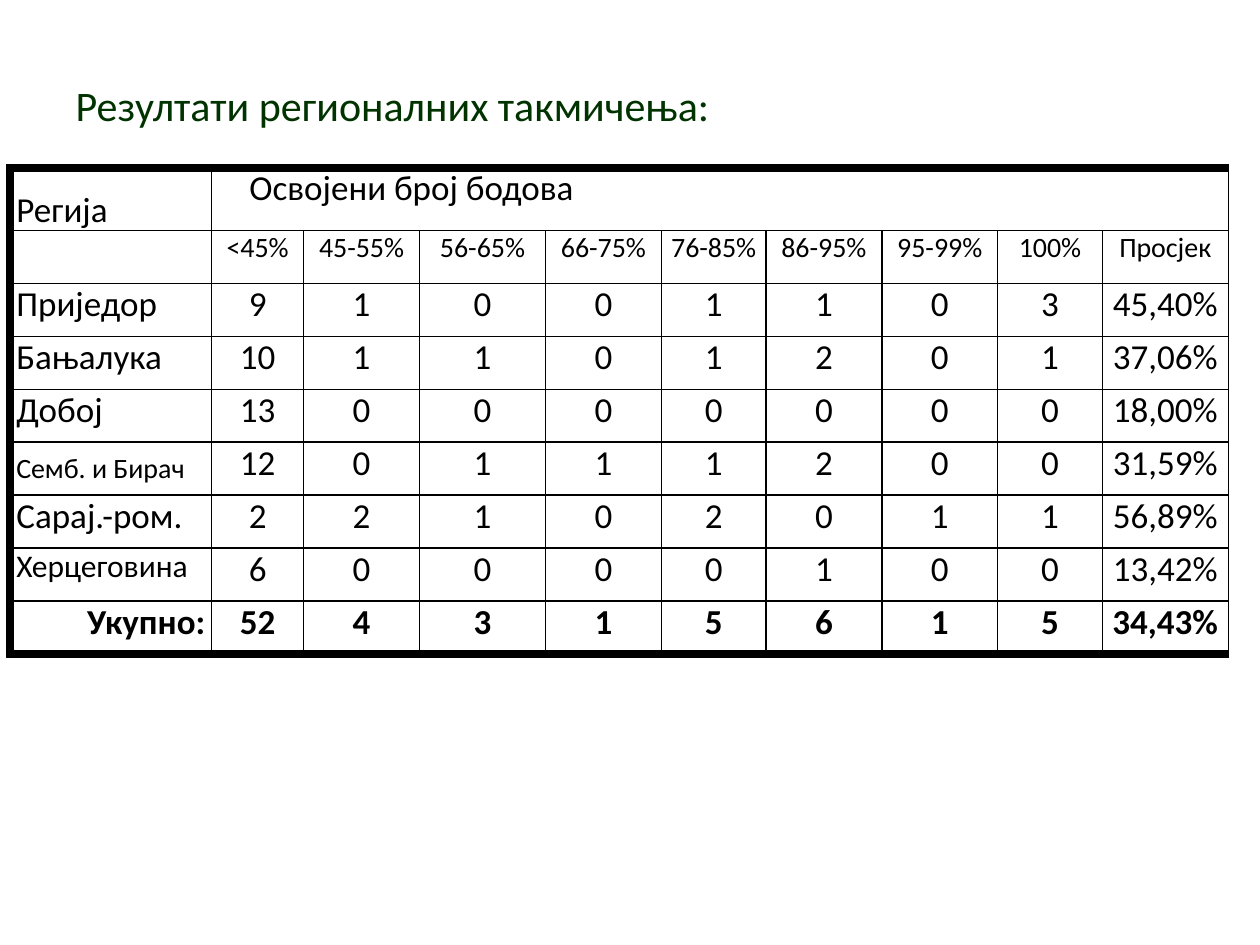
import dataclasses

import lxml.etree
import pptx
import pptx.dml.color
import pptx.enum.text
import pptx.oxml.ns
import pptx.table
import pptx.util

Inches = pptx.util.Inches
Align = pptx.enum.text.PP_ALIGN
Anchor = pptx.enum.text.MSO_ANCHOR

BLACK = pptx.dml.color.RGBColor(0x00, 0x00, 0x00)
DARK_GREEN = pptx.dml.color.RGBColor(0x00, 0x33, 0x00)
FONT = "Calibri"
THIN, THICK = 1, 5.25
ROW_HEIGHT = 0.42
COLUMN_WIDTHS = [1.6, 0.73, 0.92, 1, 0.92, 0.83, 0.92, 0.92, 0.83, 1]
SCORE_BANDS = ["<45%", "45-55%", "56-65%", "66-75%", "76-85%", "86-95%", "95-99%", "100%", "Просјек"]


@dataclasses.dataclass
class CellStyle:
    size: float = 20
    bold: bool = False
    align: Align = Align.CENTER
    anchor: Anchor = Anchor.TOP
    margin: float = 0
    indent: float = 0
    line_spacing: float = 1


@dataclasses.dataclass
class Region:
    name: str
    counts: list[int]
    average: str
    name_size: float = 20
    name_anchor: Anchor = Anchor.TOP


REGIONS = [
    Region("Приједор", [9, 1, 0, 0, 1, 1, 0, 3], "45,40%"),
    Region("Бањалука", [10, 1, 1, 0, 1, 2, 0, 1], "37,06%"),
    Region("Добој", [13, 0, 0, 0, 0, 0, 0, 0], "18,00%"),
    Region("Семб. и Бирач", [12, 0, 1, 1, 1, 2, 0, 0], "31,59%", 16, Anchor.MIDDLE),
    Region("Сарај.-ром.", [2, 2, 1, 0, 2, 0, 1, 1], "56,89%"),
    Region("Херцеговина", [6, 0, 0, 0, 0, 1, 0, 0], "13,42%", 18),
]
TOTAL = Region("Укупно:", [52, 4, 3, 1, 5, 6, 1, 5], "34,43%")


def write_cell(cell: pptx.table._Cell, text: str, style: CellStyle) -> None:
    cell.vertical_anchor = style.anchor
    para = cell.text_frame.paragraphs[0]
    para.text = text
    para.alignment = style.align
    para.line_spacing = style.line_spacing
    properties = para._p.get_or_add_pPr()
    properties.set("marL", str(Inches(style.margin)))
    properties.set("indent", str(Inches(style.indent)))
    for span in para.runs:
        span.font.name = FONT
        span.font.size = pptx.util.Pt(style.size)
        span.font.bold = style.bold
        span.font.color.rgb = BLACK


def add_border(cell: pptx.table._Cell, side: str, width: float) -> None:
    qn = pptx.oxml.ns.qn
    line = lxml.etree.SubElement(
        cell._tc.get_or_add_tcPr(), qn(f"a:ln{side}"), w=str(pptx.util.Pt(width))
    )
    fill = lxml.etree.SubElement(line, qn("a:solidFill"))
    lxml.etree.SubElement(fill, qn("a:srgbClr"), val=str(BLACK))


def format_grid(table: pptx.table.Table) -> None:
    last_row = len(table.rows) - 1
    for row_index, row in enumerate(table.rows):
        for column_index, cell in enumerate(row.cells):
            cell.margin_left = cell.margin_right = Inches(0.05)
            cell.margin_top = cell.margin_bottom = 0
            add_border(cell, "L", THICK if column_index == 0 else THIN)
            add_border(cell, "R", THIN)
            add_border(cell, "T", THICK if row_index == 0 else THIN)
            add_border(cell, "B", THICK if row_index == last_row else THIN)
            cell.fill.background()


def write_region(table: pptx.table.Table, row: int, region: Region, name_style: CellStyle) -> None:
    write_cell(table.cell(row, 0), region.name, name_style)
    for column, value in enumerate([*region.counts, region.average], start=1):
        write_cell(table.cell(row, column), str(value), CellStyle(bold=name_style.bold))


def add_title(page: pptx.slide.Slide) -> None:
    title = page.shapes.title
    title.left, title.top = Inches(0.5), Inches(0.58)
    title.width, title.height = Inches(8.33), Inches(0.5)
    frame = title.text_frame
    frame.text = "Резултати регионалних такмичења:"
    frame.word_wrap = True
    frame.vertical_anchor = Anchor.TOP
    frame.auto_size = pptx.enum.text.MSO_AUTO_SIZE.SHAPE_TO_FIT_TEXT
    para = frame.paragraphs[0]
    para.alignment = Align.LEFT
    font = para.runs[0].font
    font.name = FONT
    font.size = pptx.util.Pt(24)
    font.color.rgb = DARK_GREEN


def add_results(page: pptx.slide.Slide) -> None:
    row_count = len(REGIONS) + 3
    table = page.shapes.add_table(
        row_count, len(COLUMN_WIDTHS), Inches(0.08), Inches(1.33),
        Inches(sum(COLUMN_WIDTHS)), Inches(ROW_HEIGHT * row_count),
    ).table
    table.first_row = table.horz_banding = False
    for column, width in zip(table.columns, COLUMN_WIDTHS):
        column.width = Inches(width)
    for row in table.rows:
        row.height = Inches(ROW_HEIGHT)
    format_grid(table)
    table.cell(0, 1).merge(table.cell(0, len(COLUMN_WIDTHS) - 1))

    hanging = CellStyle(align=Align.LEFT, margin=0.49, indent=-0.49)
    write_cell(table.cell(0, 0), "Регија",
               dataclasses.replace(hanging, anchor=Anchor.MIDDLE, line_spacing=1.5))
    write_cell(table.cell(0, 1), "Освојени број бодова",
               CellStyle(align=Align.LEFT, margin=0.5, indent=-0.25))
    for column, band in enumerate(SCORE_BANDS, start=1):
        write_cell(table.cell(1, column), band,
                   dataclasses.replace(hanging, size=16, align=Align.CENTER))
    for row, region in enumerate(REGIONS, start=2):
        write_region(table, row, region, dataclasses.replace(
            hanging, size=region.name_size, anchor=region.name_anchor))
    write_region(table, row_count - 1, TOTAL,
                 dataclasses.replace(hanging, bold=True, align=Align.RIGHT))


def main() -> None:
    deck = pptx.Presentation()
    deck.slide_width, deck.slide_height = Inches(10), Inches(7.5)
    page = deck.slides.add_slide(deck.slide_layouts.get_by_name("Title Only"))
    add_title(page)
    add_results(page)
    deck.save("out.pptx")


if __name__ == "__main__":
    main()
